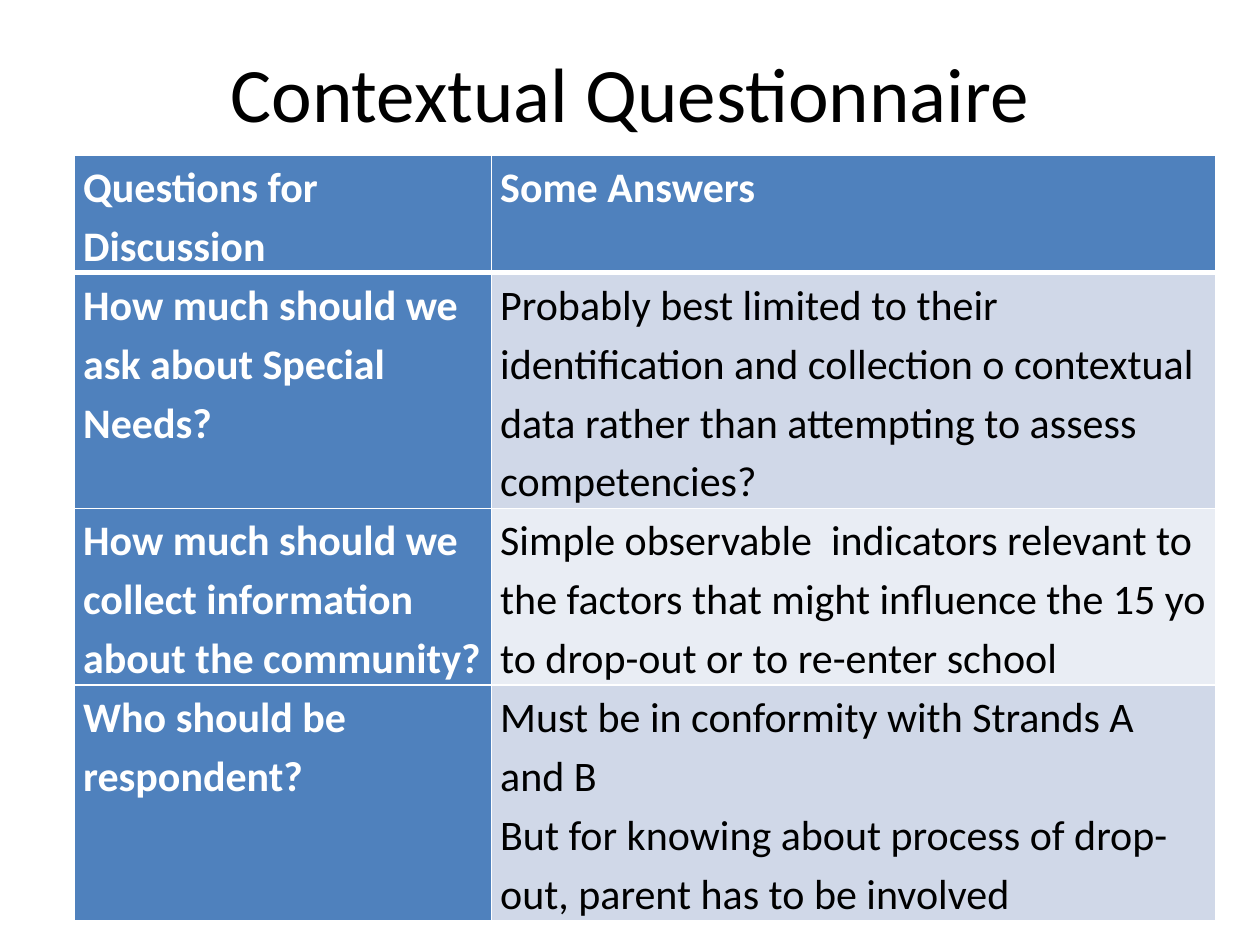
from lxml import etree
from pptx import Presentation
from pptx.dml.color import RGBColor
from pptx.enum import text
from pptx.oxml import ns
from pptx.util import Inches, Pt

COLOURS = {"header": "4F81BD", "band": "D0D8E8", "light": "E9EDF4",
           "white": "FFFFFF", "black": "000000"}
FONT = "Calibri"
COLUMN_WIDTHS = [3.31, 5.75]
ROW_HEIGHTS = [0.93, 1.87, 1.4, 1.87]

# Each cell is a list of paragraphs
DISCUSSION = [
    (["Questions for Discussion"], ["Some Answers"]),
    (["How much should we ask about Special Needs?"],
     ["Probably best limited to their identification and collection o "
      "contextual data rather than attempting to assess competencies?"]),
    (["How much should we collect information about the community?"],
     ["Simple observable  indicators relevant to the factors that might "
      "influence the 15 yo to drop-out or to re-enter school"]),
    (["Who should be respondent?"],
     ["Must be in conformity with Strands A and B",
      "But for knowing about process of drop-out, parent has to be involved"]),
]


def rgb(name):
    return RGBColor.from_string(COLOURS[name])


def add_run(paragraph, wording, size, colour, bold=False):
    run = paragraph.add_run()
    run.text = wording
    run.font.name = FONT
    run.font.size = Pt(size)
    run.font.bold = bold
    run.font.color.rgb = rgb(colour)


def set_borders(cell, widths):
    """Draw white borders; widths maps an edge (L, R, T, B) to points."""
    properties = cell._tc.get_or_add_tcPr()
    for position, (edge, width) in enumerate(widths.items()):
        line = etree.Element(ns.qn(f"a:ln{edge}"), w=str(Pt(width)))
        fill = etree.SubElement(line, ns.qn("a:solidFill"))
        etree.SubElement(fill, ns.qn("a:srgbClr"), val=COLOURS["white"])
        properties.insert(position, line)


def fill_cell(cell, paragraphs, fill, colour, bold):
    cell.margin_left = cell.margin_right = Inches(0.07)
    cell.margin_top = cell.margin_bottom = 0
    cell.fill.solid()
    cell.fill.fore_color.rgb = rgb(fill)
    frame = cell.text_frame
    for index, wording in enumerate(paragraphs):
        paragraph = frame.add_paragraph() if index else frame.paragraphs[0]
        paragraph.line_spacing = 1.15
        add_run(paragraph, wording, 24, colour, bold)


def add_title(slide, wording):
    title = slide.shapes.title
    title.left, title.top = Inches(0.5), Inches(0.3)
    title.width, title.height = Inches(9), Inches(0.85)
    frame = title.text_frame
    frame.vertical_anchor = text.MSO_ANCHOR.MIDDLE
    paragraph = frame.paragraphs[0]
    paragraph.alignment = text.PP_ALIGN.CENTER
    add_run(paragraph, wording, 44, "black")


def add_discussion_table(slide):
    table = slide.shapes.add_table(
        len(DISCUSSION), len(COLUMN_WIDTHS), Inches(0.59), Inches(1.23),
        Inches(sum(COLUMN_WIDTHS)), Inches(sum(ROW_HEIGHTS))).table
    table.first_col = True
    for column, width in zip(table.columns, COLUMN_WIDTHS):
        column.width = Inches(width)
    for row, height in zip(table.rows, ROW_HEIGHTS):
        row.height = Inches(height)

    for r, answers in enumerate(DISCUSSION):
        for c, paragraphs in enumerate(answers):
            cell = table.cell(r, c)
            heading = r == 0 or c == 0
            band = "band" if r % 2 else "light"
            fill_cell(cell, paragraphs, "header" if heading else band,
                      "white" if heading else "black", heading)
            # The rule under the header row is heavier
            set_borders(cell, {"L": 1, "R": 1, "T": 3 if r == 1 else 1,
                               "B": 3 if r == 0 else 1})


def main():
    deck = Presentation()
    deck.slide_width, deck.slide_height = Inches(10), Inches(7.5)
    slide = deck.slides.add_slide(deck.slide_layouts[5])
    add_title(slide, "Contextual Questionnaire")
    add_discussion_table(slide)
    deck.save("out.pptx")


if __name__ == "__main__":
    main()
